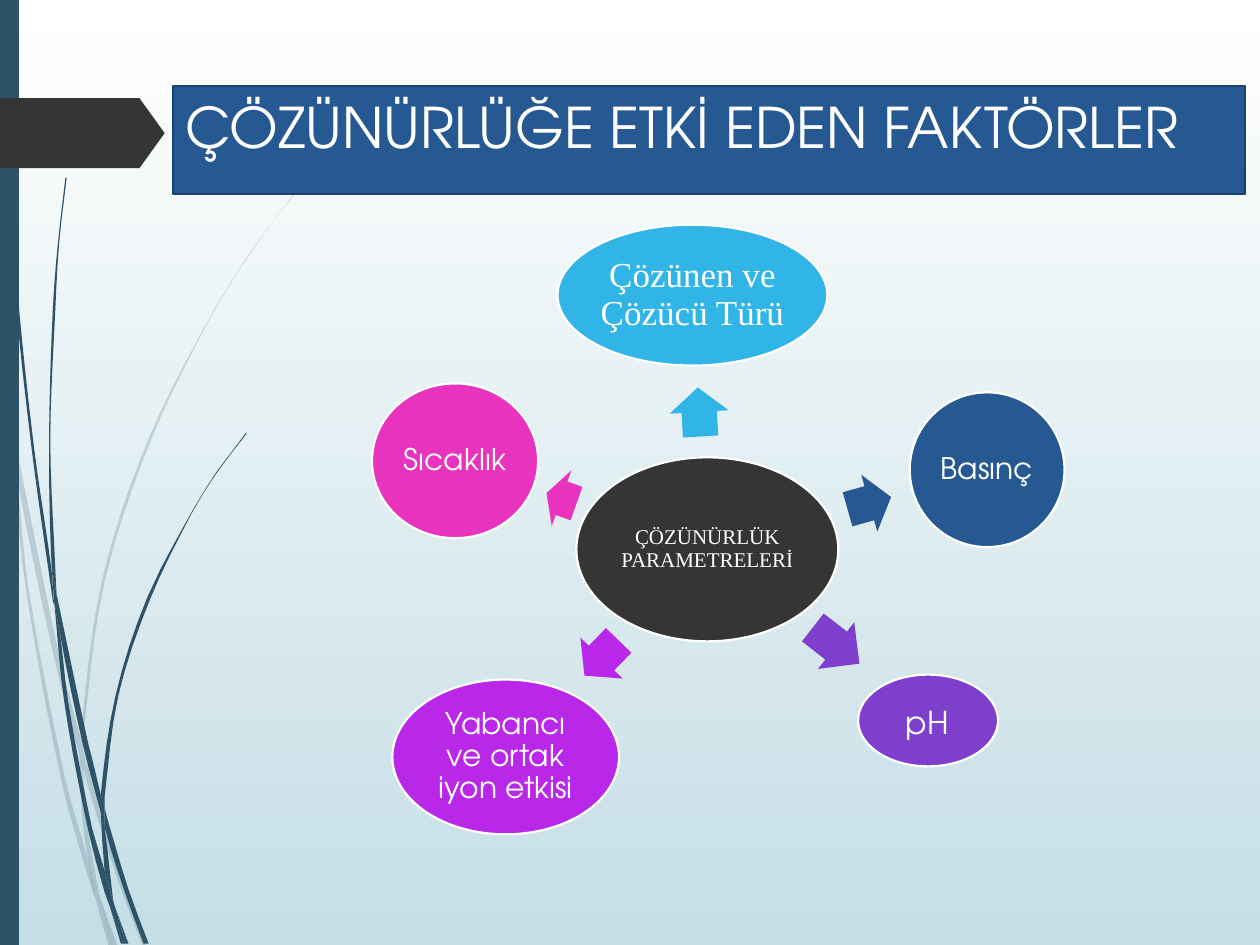
import pptx
import pptx.util
import pptx.dml.color
import pptx.enum.shapes
import pptx.enum.text
import pptx.oxml.ns
import lxml.etree

Cm = pptx.util.Cm
RGB = pptx.dml.color.RGBColor
SHAPE = pptx.enum.shapes.MSO_SHAPE
ALIGN = pptx.enum.text.PP_ALIGN
ANCHOR = pptx.enum.text.MSO_ANCHOR
qn = pptx.oxml.ns.qn

WHITE = RGB(0xFF, 0xFF, 0xFF)
MIST = RGB(0xC5, 0xDE, 0xE5)
TEAL = RGB(0x2E, 0x53, 0x69)
CHARCOAL = RGB(0x35, 0x35, 0x35)
BLUE = RGB(0x26, 0x59, 0x91)
NAVY = RGB(0x1C, 0x42, 0x6B)
SKY = RGB(0x31, 0xB4, 0xE6)
VIOLET = RGB(0x7E, 0x40, 0xCC)
PURPLE = RGB(0xB9, 0x27, 0xE9)
PINK = RGB(0xE8, 0x33, 0xBF)
SANS = "TeX Gyre Adventor"
SERIF = "Times New Roman"


def write(shape, text, font=SANS, size=17, align=ALIGN.CENTER,
          anchor=ANCHOR.MIDDLE, spacing=0.9, margins=(0.05, 0.05)):
    frame = shape.text_frame
    frame.word_wrap = True
    frame.auto_size = pptx.enum.text.MSO_AUTO_SIZE.NONE
    frame.vertical_anchor = anchor
    frame.margin_left = frame.margin_right = Cm(margins[0])
    frame.margin_top = frame.margin_bottom = Cm(margins[1])
    paragraph = frame.paragraphs[0]
    paragraph.alignment = align
    paragraph.line_spacing = spacing
    run = paragraph.add_run()
    run.text = text
    run.font.name = font
    run.font.size = pptx.util.Pt(size)
    run.font.color.rgb = WHITE


def smooth_edge(points):
    """Cubic curve through points that run steadily down the slide."""
    last = len(points) - 1
    slopes = []
    for i in range(last + 1):
        (x0, y0), (x1, y1) = points[max(i - 1, 0)], points[min(i + 1, last)]
        slopes.append((x1 - x0) / (y1 - y0))
    curve = []
    for i in range(last):
        (x0, y0), (x1, y1) = points[i], points[i + 1]
        drop = y1 - y0
        steps = max(1, round(drop / 20))
        for step in range(steps):
            t = step / steps
            x = ((2 * t**3 - 3 * t**2 + 1) * x0 + (3 * t**2 - 2 * t**3) * x1
                 + (t**3 - 2 * t**2 + t) * drop * slopes[i]
                 + (t**3 - t**2) * drop * slopes[i + 1])
            curve.append((x, y0 + t * drop))
    return curve + [points[-1]]


prs = pptx.Presentation()
prs.slide_width, prs.slide_height = Cm(25.4), Cm(19.05)
slide = prs.slides.add_slide(prs.slide_layouts[5])
shapes = slide.shapes

# Background gradient, white at the top
backdrop = slide.background.fill
backdrop.gradient()
backdrop.gradient_angle = 270
for stop, color, position in zip(backdrop.gradient_stops, (WHITE, MIST), (0, 1)):
    stop.color.rgb = color
    stop.position = position

# Grass blades as left edge, right edge (units of 0.0254 cm)
pale_blades = [
    ([(0, 299), (8, 344), (8, 350)], [(0, 282), (6, 322), (8, 350)]),
    ([(11, 345), (13, 376), (43, 522), (63, 599)], [(11, 345), (47, 520), (64, 586)]),
    ([(66, 596), (66, 610), (92, 694), (113, 750)],
     [(66, 596), (69, 607), (95, 692), (116, 750)]),
    ([(79, 711), (89, 750)], [(79, 711), (93, 750)]),
    ([(8, 350), (21, 470), (49, 621), (69, 693), (76, 714)],
     [(8, 350), (13, 376), (23, 469), (52, 619), (70, 683), (76, 714)]),
    ([(63, 599), (65, 646), (70, 683), (72, 692), (79, 711)],
     [(63, 599), (66, 610), (68, 646), (78, 706), (79, 711)]),
    ([(234, 153), (217, 175), (201, 197), (171, 244), (118, 348), (81, 461),
      (64, 584), (66, 596)],
     [(234, 154), (217, 175), (201, 198), (171, 245), (120, 349), (83, 462),
      (66, 584), (66, 596)]),
    ([(76, 714), (86, 750)], [(76, 714), (89, 750)]),
    ([(64, 586), (63, 599), (66, 610)], [(64, 586), (66, 596), (66, 610)]),
    ([(70, 683), (74, 707), (89, 750)], [(70, 683), (72, 692), (79, 711), (89, 750)]),
]
dark_blades = [
    ([(2, 0), (5, 110), (12, 233), (25, 355), (42, 477), (43, 481)],
     [(3, 0), (6, 109), (14, 232), (27, 355), (41, 453), (43, 481)]),
    ([(45, 472), (48, 505), (66, 592), (80, 645)],
     [(45, 472), (70, 590), (80, 631), (80, 645)]),
    ([(83, 641), (83, 656), (99, 708), (114, 749)],
     [(83, 641), (85, 649), (102, 706), (118, 749)]),
    ([(43, 477), (51, 557), (70, 659), (83, 708), (88, 722)],
     [(43, 477), (48, 505), (54, 556), (73, 657), (83, 691), (88, 722)]),
    ([(52, 141), (46, 193), (42, 245), (39, 349), (41, 449), (45, 472)],
     [(53, 141), (47, 193), (44, 245), (40, 349), (44, 453), (45, 472)]),
    ([(91, 719), (100, 749)], [(91, 719), (102, 749)]),
    ([(41, 449), (43, 477), (48, 505)], [(41, 449), (45, 472), (48, 505)]),
    ([(195, 344), (173, 373), (153, 405), (117, 474), (92, 551), (80, 631), (83, 641)],
     [(196, 344), (173, 374), (153, 406), (119, 476), (94, 552), (83, 633), (83, 641)]),
    ([(88, 722), (96, 749)], [(88, 722), (98, 749)]),
    ([(80, 645), (83, 691), (87, 706), (91, 719)],
     [(80, 645), (83, 656), (90, 716), (91, 719)]),
    ([(80, 631), (80, 645), (83, 656)], [(80, 631), (83, 641), (83, 656)]),
    ([(83, 691), (88, 722), (98, 749)], [(83, 691), (87, 706), (91, 719), (100, 749)]),
]
for opacity, blades in ((20, pale_blades), (100, dark_blades)):
    for left_edge, right_edge in blades:
        outline = smooth_edge(left_edge) + smooth_edge(right_edge)[::-1]
        outline = [(Cm(x * 0.0254), Cm(y * 0.0254)) for x, y in outline]
        builder = shapes.build_freeform(*outline[0], scale=1.0)
        builder.add_line_segments(outline[1:], close=True)
        blade = builder.convert_to_shape()
        blade.shadow.inherit = False
        blade.fill.solid()
        blade.fill.fore_color.rgb = TEAL
        blade.line.fill.background()
        if opacity < 100:
            tint = blade._element.spPr.find(".//" + qn("a:srgbClr"))
            lxml.etree.SubElement(tint, qn("a:alpha"), val=str(opacity * 1000))

# Side bar, page tab, and the arrows that point to each factor
plain = [
    (SHAPE.RECTANGLE, (0, 0, 0.38, 19.05), TEAL, 0, ()),
    (SHAPE.PENTAGON, (0, 1.98, 3.32, 1.41), CHARCOAL, 0, (0.36,)),
]
arrows = [
    ((13.6, 7.71, 0.99, 1.19), SKY, 266.6),
    ((17.07, 9.55, 0.91, 1.19), BLUE, 344.2),
    ((16.26, 12.42, 1.19, 1.19), VIOLET, 37.9),
    ((11.63, 12.67, 0.99, 1.19), PURPLE, 134.1),
    ((11, 9.45, 0.64, 1.19), PINK, 199.3),
]
plain += [(SHAPE.RIGHT_ARROW, box, color, turn, (0.6, 0.5))
          for box, color, turn in arrows]
for kind, box, color, turn, adjustments in plain:
    part = shapes.add_shape(kind, *map(Cm, box))
    part.shadow.inherit = False
    part.fill.solid()
    part.fill.fore_color.rgb = color
    part.line.fill.background()
    part.rotation = turn
    for i, value in enumerate(adjustments):
        part.adjustments[i] = value

# Ovals with their text
ovals = [
    ((11.62, 9.22, 5.28, 3.71), CHARCOAL, "ÇÖZÜNÜRLÜK PARAMETRELERİ", SERIF, 12),
    ((11.24, 4.53, 5.44, 2.84), SKY, "Çözünen ve Çözücü Türü", SERIF, 20),
    ((18.34, 7.91, 3.12, 3.12), BLUE, "Basınç", SANS, 17),
    ((17.3, 13.6, 2.82, 1.85), VIOLET, "", SANS, 18),
    ((7.91, 13.7, 4.57, 3.12), PURPLE, "Yabancı ve ortak iyon etkisi", SANS, 17),
    ((7.5, 7.73, 3.35, 3.12), PINK, "Sıcaklık", SANS, 17),
]
for box, color, text, font, size in ovals:
    oval = shapes.add_shape(SHAPE.OVAL, *map(Cm, box))
    oval.shadow.inherit = False
    oval.fill.solid()
    oval.fill.fore_color.rgb = color
    oval.line.color.rgb = WHITE
    oval.line.width = pptx.util.Pt(1.25)
    if text:
        write(oval, text, font=font, size=size)

# Acidity label over its oval
acidity = shapes.add_textbox(Cm(18.01), Cm(14.05), Cm(1.4), Cm(1.02))
write(acidity, "pH", size=18, align=ALIGN.LEFT, anchor=ANCHOR.TOP, spacing=1.0,
      margins=(0.25, 0.13))

# Title band
title = shapes.title
title.left, title.top, title.width, title.height = map(Cm, (3.49, 1.73, 21.61, 2.19))
title.fill.solid()
title.fill.fore_color.rgb = BLUE
title.line.color.rgb = NAVY
title.line.width = pptx.util.Pt(1.25)
write(title, "ÇÖZÜNÜRLÜĞE ETKİ EDEN FAKTÖRLER", size=32, align=ALIGN.LEFT,
      anchor=ANCHOR.TOP, spacing=1.0, margins=(0.25, 0.13))

prs.save("out.pptx")
